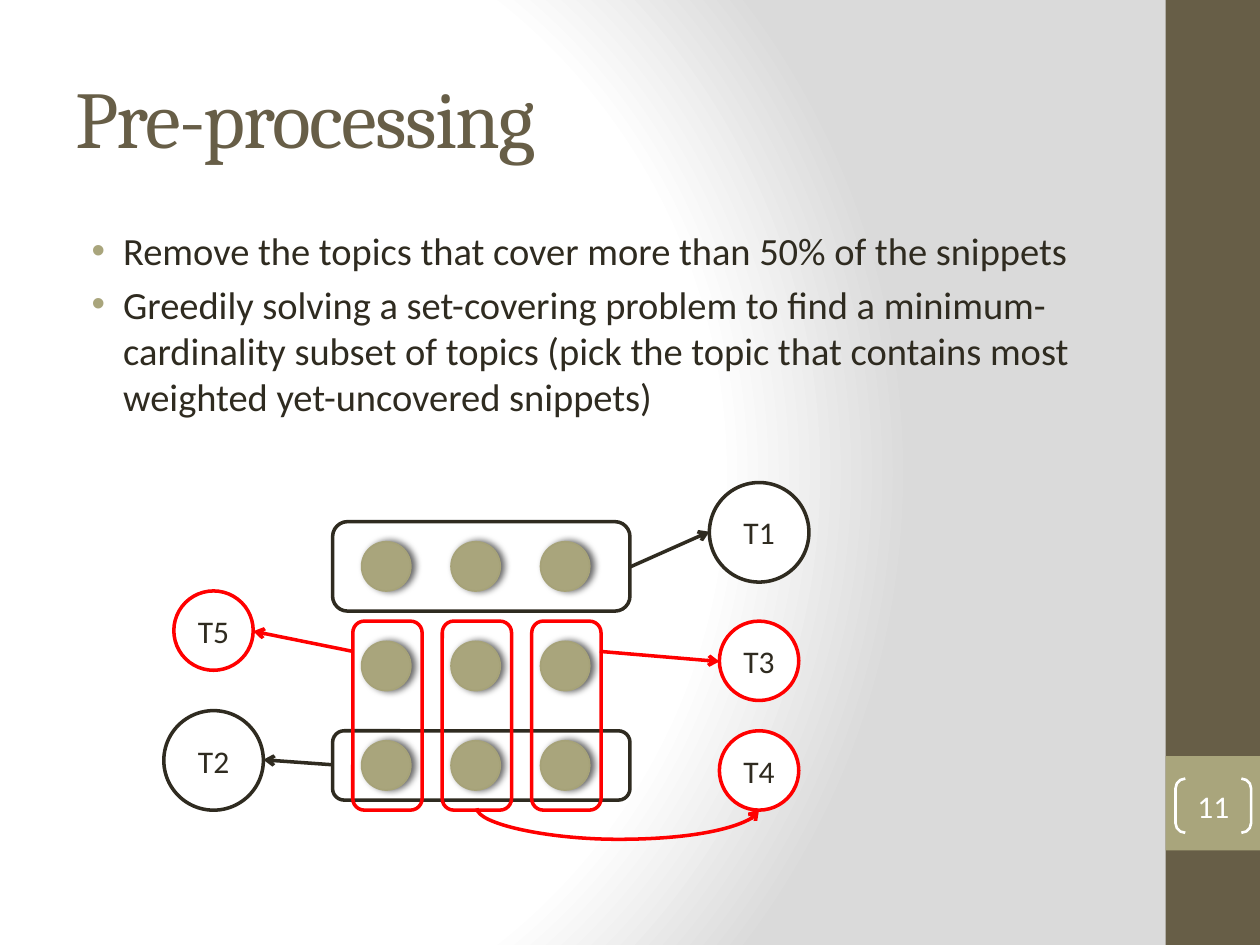
import dataclasses

import lxml.etree
import pptx
import pptx.dml.color
import pptx.enum.dml
import pptx.enum.shapes
import pptx.enum.text
import pptx.oxml.ns
import pptx.util

PX = 9144
KIND = pptx.enum.shapes.MSO_SHAPE
LINK = pptx.enum.shapes.MSO_CONNECTOR
ALIGN = pptx.enum.text.PP_ALIGN
ANCHOR = pptx.enum.text.MSO_ANCHOR


@dataclasses.dataclass(frozen=True)
class Theme:
    brown: str = "675E47"
    olive: str = "A9A57C"
    rim: str = "A6A278"
    ink: str = "2F2B20"
    red: str = "FF0000"
    white: str = "FFFFFF"
    gray: str = "DADADA"
    black: str = "000000"
    head: str = "Cambria"
    body: str = "Calibri"
    title: int = 46
    text: int = 22
    label: int = 18


THEME = Theme()


def color(code):
    return pptx.dml.color.RGBColor.from_string(code)


def add(node, tag, **attrs):
    child = lxml.etree.SubElement(node, pptx.oxml.ns.qn(tag))
    for key, value in attrs.items():
        child.set(key, str(value))
    return child


def write(shape, *lines, size=THEME.label, font=THEME.body, tint=THEME.ink,
          align=ALIGN.LEFT, anchor=ANCHOR.TOP, inset=None, track=0, bullet=None):
    frame = shape.text_frame
    frame.word_wrap = True
    frame.vertical_anchor = anchor
    if inset is not None:
        frame.margin_left = frame.margin_right = inset * PX
        frame.margin_top = frame.margin_bottom = inset * PX
    for i, line in enumerate(lines):
        para = frame.add_paragraph() if i else frame.paragraphs[0]
        para.alignment = align
        run = para.add_run()
        run.text = line
        run.font.size = pptx.util.Pt(size)
        run.font.name = font
        run.font.color.rgb = color(tint)
        if track:
            run.font._element.set("spc", str(track))
        if bullet:
            para.space_before = pptx.util.Pt(size * 0.2)
            props = para._p.get_or_add_pPr()
            props.set("marL", str(38 * PX))
            props.set("indent", str(-25 * PX))
            add(add(props, "a:buClr"), "a:srgbClr", val=bullet)
            add(props, "a:buFont", typeface="Arial")
            add(props, "a:buChar", char="•")


def text(slide, box, *lines, **form):
    shape = slide.shapes.add_textbox(*(n * PX for n in box))
    write(shape, *lines, **form)


def draw(slide, kind, box, fill=None, line=None, width=2):
    shape = slide.shapes.add_shape(kind, *(n * PX for n in box))
    shape.shadow.inherit = False
    if fill:
        shape.fill.solid()
        shape.fill.fore_color.rgb = color(fill)
    else:
        shape.fill.background()
    if line:
        shape.line.color.rgb = color(line)
        shape.line.width = pptx.util.Pt(width)
    else:
        shape.line.fill.background()
    return shape


def arrow(slide, start, end, tint, kind=LINK.STRAIGHT):
    link = slide.shapes.add_connector(kind, *(n * PX for n in start + end))
    link.line.color.rgb = color(tint)
    link.line.width = pptx.util.Pt(2)
    add(link.line._get_or_add_ln(), "a:tailEnd", type="arrow")
    add(link._element.spPr, "a:effectLst")
    return link


def curve(slide, start, end, drop, tint):
    wide, high = end[0] - start[0], end[1] - start[1]
    left = (start[0] + end[0] - high) // 2
    top = (start[1] + end[1] - wide) // 2
    link = arrow(slide, (left, top), (left + high, top + wide), tint, LINK.CURVE)
    link.rotation = 270
    props = link._element.spPr
    props.find(pptx.oxml.ns.qn("a:xfrm")).set("flipH", "1")
    guides = props.find(".//" + pptx.oxml.ns.qn("a:avLst"))
    add(guides, "a:gd", name="adj1", fmla=f"val {drop * 100000 // high}")


def ground(slide):
    slide.background.fill.gradient()
    grad = slide.element.xpath(".//a:gradFill")[0]
    for child in list(grad):
        grad.remove(child)
    stops = add(grad, "a:gsLst")
    for place, tint in ((0, THEME.white), (75, THEME.white), (100, THEME.gray)):
        add(add(stops, "a:gs", pos=place * 1000), "a:srgbClr", val=tint)
    add(add(grad, "a:path", path="circle"), "a:fillToRect",
        l=20000, t=50000, r=100000, b=50000)


def side(slide, box, page):
    x, y, wide, high = box
    draw(slide, KIND.RECTANGLE, box, THEME.brown)
    draw(slide, KIND.RECTANGLE, (x, y + 600, wide, wide), THEME.olive)
    mark = draw(slide, KIND.DOUBLE_BRACKET, (x + 8, y + 618, 60, 43),
                line=THEME.white, width=1.5)
    mark.adjustments[0] = 0.18
    write(mark, page, tint=THEME.white, align=ALIGN.CENTER,
          anchor=ANCHOR.MIDDLE, inset=0)


def dot(slide, box):
    shape = draw(slide, KIND.OVAL, box, THEME.olive, THEME.rim, 1)
    glow = shape._element.spPr.find(pptx.oxml.ns.qn("a:effectLst"))
    shade = add(glow, "a:outerShdw", blurRad=pptx.util.Pt(4),
                dist=pptx.util.Pt(2), dir=0, rotWithShape=0)
    add(add(shade, "a:srgbClr", val=THEME.black), "a:alpha", val=60000)


def topic(slide, box, name, tint):
    shape = draw(slide, KIND.OVAL, box, THEME.white, tint)
    write(shape, name, align=ALIGN.CENTER, anchor=ANCHOR.MIDDLE, inset=0)


def graph(slide, box):
    x, y = box[:2]
    for row in range(3):
        for col in range(3):
            dot(slide, (x + 157 + 71 * col, y + 47 + 79 * row, 39, 39))
    for top, high in ((31, 71), (197, 55)):
        draw(slide, KIND.ROUNDED_RECTANGLE, (x + 134, y + top, 236, high), line=THEME.ink)
    for col in range(3):
        draw(slide, KIND.ROUNDED_RECTANGLE, (x + 150 + 71 * col, y + 110, 55, 150),
             line=THEME.red)
    for name, left, top, size, tint in (
        ("T1", 433, 0, 79, THEME.ink),
        ("T2", 0, 181, 79, THEME.ink),
        ("T3", 441, 110, 63, THEME.red),
        ("T4", 441, 197, 63, THEME.red),
        ("T5", 8, 86, 63, THEME.red),
    ):
        topic(slide, (x + left, y + top, size, size), name, tint)
    for start, end, tint in (
        ((370, 67), (433, 39), THEME.ink),
        ((134, 224), (79, 220), THEME.ink),
        ((150, 134), (71, 118), THEME.red),
        ((346, 134), (441, 142), THEME.red),
    ):
        arrow(slide, (x + start[0], y + start[1]), (x + end[0], y + end[1]), tint)
    curve(slide, (x + 249, y + 259), (x + 473, y + 260), 25, THEME.red)


deck = pptx.Presentation()
deck.slide_width, deck.slide_height = 1000 * PX, 750 * PX
page = deck.slides.add_slide(deck.slide_layouts[6])
ground(page)
side(page, (925, 0, 75, 750), "11")
text(page, (50, 30, 833, 125), "Pre-processing", size=THEME.title, font=THEME.head,
     tint=THEME.brown, anchor=ANCHOR.MIDDLE, track=-100)
text(page, (50, 175, 833, 525),
     "Remove the topics that cover more than 50% of the snippets",
     "Greedily solving a set-covering problem to find a minimum-cardinality subset of "
     "topics (pick the topic that contains most weighted yet-uncovered snippets)",
     size=THEME.text, bullet=THEME.olive)
graph(page, (130, 383, 512, 285))
deck.save("out.pptx")
